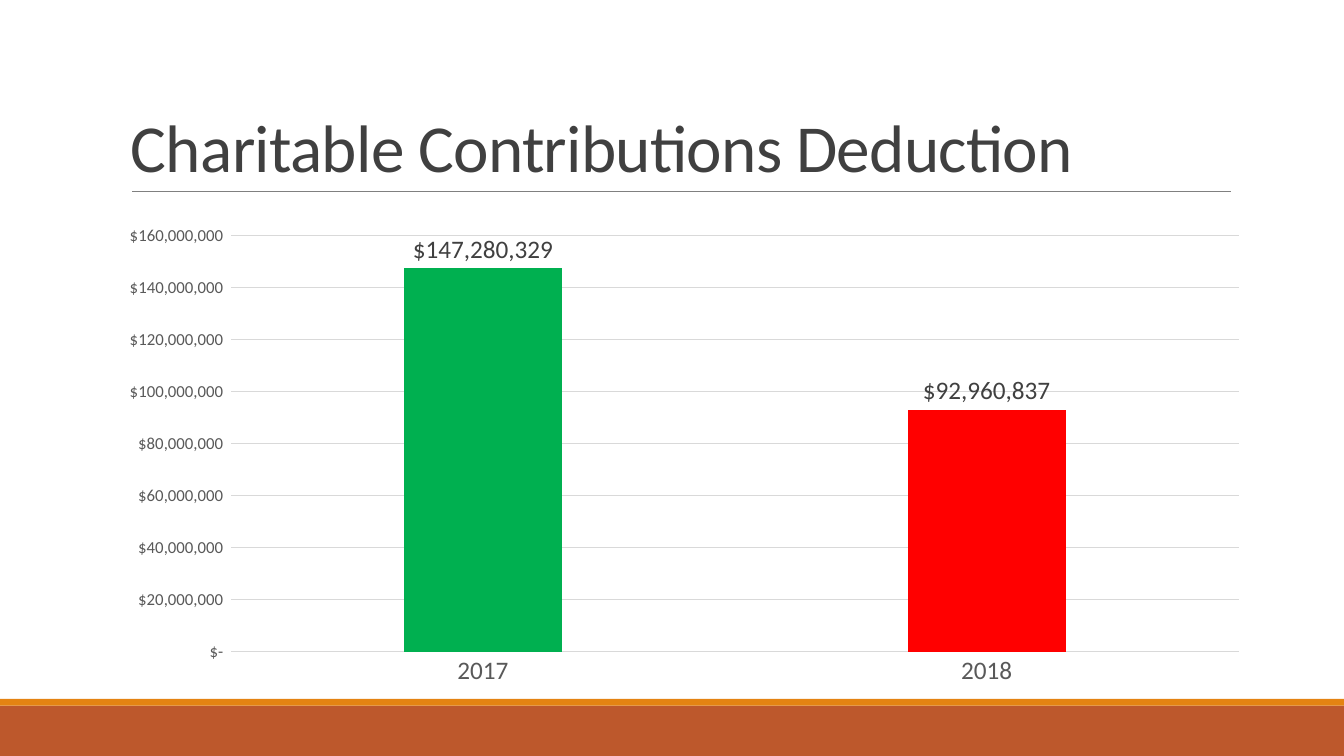
import pptx
import pptx.chart.data
import pptx.dml.color
import pptx.enum.chart
import pptx.enum.shapes
import pptx.enum.text
import pptx.util
from pptx.util import Cm

TITLE = "Charitable Contributions Deduction"
DEDUCTIONS = [("2017", 147280329, "green"), ("2018", 92960837, "red")]
DOLLARS = '_("$"* #,##0_);_("$"* \\(#,##0\\);_("$"* "-"_);_(@_)'
FONT = "Calibri"
COLORS = {
    "rust": "BD582C", "orange": "E48312", "rule": "808080", "title": "404040",
    "axis": "595959", "grid": "D9D9D9", "green": "00B050", "red": "FF0000",
    "white": "FFFFFF",
}
SLIDE_W, SLIDE_H = 33.87, 19.05
FOOTER_H, STRIPE_H = 1.27, 0.17
TITLE_BOX = (3.05, 0.79, 27.94, 4.04)
RULE_LEFT, RULE_RIGHT, RULE_Y = 3.33, 31.01, 4.83
CHART_BOX = (2.59, 5.44, 29.21, 12.09)


def color(name):
    return pptx.dml.color.RGBColor.from_string(COLORS[name])


def paint(fill, name):
    fill.solid()
    fill.fore_color.rgb = color(name)


def style_font(font, size, name):
    font.name = FONT
    font.size = pptx.util.Pt(size)
    font.color.rgb = color(name)


def style_line(line, name, width):
    line.color.rgb = color(name)
    line.width = pptx.util.Pt(width)


def add_band(slide, top, height, name):
    band = slide.shapes.add_shape(
        pptx.enum.shapes.MSO_SHAPE.RECTANGLE, 0, Cm(top), Cm(SLIDE_W), Cm(height))
    band.shadow.inherit = False
    paint(band.fill, name)
    band.line.fill.background()


def add_rule(slide):
    rule = slide.shapes.add_connector(
        pptx.enum.shapes.MSO_CONNECTOR.STRAIGHT,
        Cm(RULE_LEFT), Cm(RULE_Y), Cm(RULE_RIGHT), Cm(RULE_Y))
    style_line(rule.line, "rule", 0.5)
    properties = rule._element.spPr
    properties.append(properties.makeelement(pptx.oxml.ns.qn("a:effectLst"), {}))


def add_title(slide):
    frame = slide.shapes.add_textbox(*map(Cm, TITLE_BOX)).text_frame
    frame.word_wrap = True
    frame.vertical_anchor = pptx.enum.text.MSO_ANCHOR.BOTTOM
    heading = frame.paragraphs[0]
    heading.line_spacing = 0.85
    run = heading.add_run()
    run.text = TITLE
    style_font(run.font, 48, "title")
    run.font._element.set("spc", "-50")


def add_deductions_chart(slide):
    years, amounts, bar_colors = zip(*DEDUCTIONS)
    figures = pptx.chart.data.CategoryChartData(number_format=DOLLARS)
    figures.categories = years
    figures.add_series("Series 1", amounts)
    chart = slide.shapes.add_chart(
        pptx.enum.chart.XL_CHART_TYPE.COLUMN_CLUSTERED,
        *map(Cm, CHART_BOX), figures).chart
    chart.has_legend = False
    chart.has_title = False
    chart.font.name = FONT
    chart.font.size = pptx.util.Pt(10)

    for axis, size in ((chart.category_axis, 18), (chart.value_axis, 12)):
        axis.major_tick_mark = pptx.enum.chart.XL_TICK_MARK.NONE
        axis.minor_tick_mark = pptx.enum.chart.XL_TICK_MARK.NONE
        style_font(axis.tick_labels.font, size, "axis")
    style_line(chart.category_axis.format.line, "grid", 0.75)
    amount_axis = chart.value_axis
    amount_axis.format.line.fill.background()
    amount_axis.has_major_gridlines = True
    style_line(amount_axis.major_gridlines.format.line, "grid", 0.75)
    amount_axis.minimum_scale = 0
    amount_axis.maximum_scale = 160_000_000
    amount_axis.major_unit = 20_000_000
    amount_axis.tick_labels.number_format = DOLLARS
    amount_axis.tick_labels.number_format_is_linked = False

    plot = chart.plots[0]
    plot.gap_width = 219
    plot.overlap = -27
    plot.vary_by_categories = False
    bars = plot.series[0]
    bars.invert_if_negative = False
    paint(bars.format.fill, "red")
    for index, name in enumerate(bar_colors):
        paint(bars.points[index].format.fill, name)
    labels = bars.data_labels
    labels.show_value = True
    labels.position = pptx.enum.chart.XL_LABEL_POSITION.OUTSIDE_END
    labels.number_format = DOLLARS
    labels.number_format_is_linked = False
    style_font(labels.font, 18, "title")


def main():
    deck = pptx.Presentation()
    deck.slide_width, deck.slide_height = Cm(SLIDE_W), Cm(SLIDE_H)
    slide = deck.slides.add_slide(deck.slide_layouts[6])
    paint(slide.background.fill, "white")
    footer_top = SLIDE_H - FOOTER_H
    add_band(slide, footer_top, FOOTER_H, "rust")
    add_band(slide, footer_top - STRIPE_H, STRIPE_H, "orange")
    add_rule(slide)
    add_title(slide)
    add_deductions_chart(slide)
    deck.save("out.pptx")


if __name__ == "__main__":
    main()
